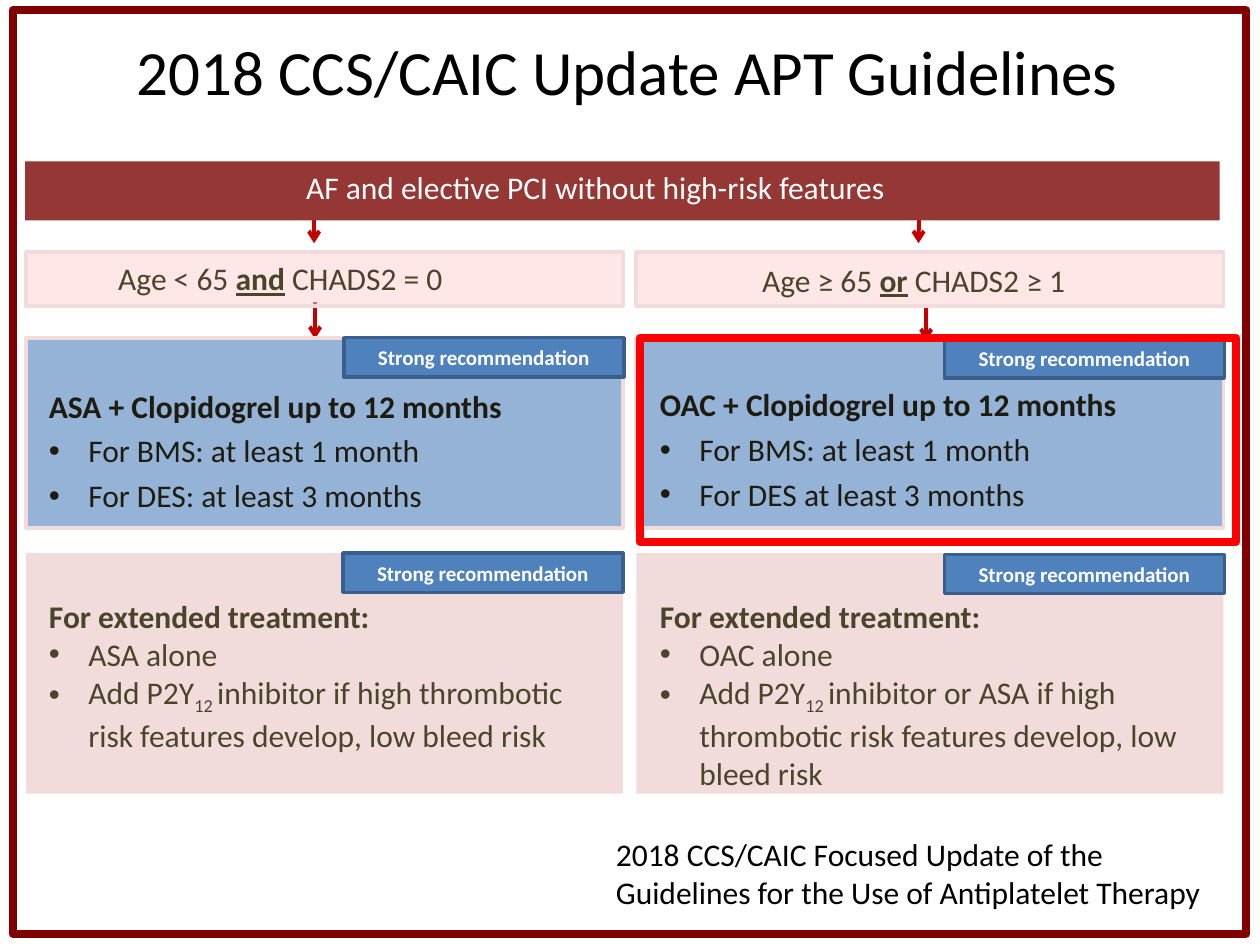
from dataclasses import dataclass

from lxml.etree import SubElement
from pptx import Presentation
from pptx.dml.color import RGBColor
from pptx.enum.shapes import MSO_CONNECTOR, MSO_SHAPE
from pptx.enum.text import MSO_ANCHOR, PP_ALIGN
from pptx.oxml.ns import qn
from pptx.util import Pt

FONT = "Calibri"
OLIVE, INK, WHITE, BLACK = "4A452A", "1E1C11", "FFFFFF", "000000"
ROSE, PALE_BLUE = "F2DCDB", "95B3D7"


@dataclass
class Run:
    text: str
    bold: bool = False
    underline: bool = False
    baseline: int = 0


@dataclass
class Para:
    runs: list[Run]
    bullet: bool = False


@dataclass
class Box:
    """Left, top, width and height in points."""
    x: float
    y: float
    w: float
    h: float

    def lengths(self):
        return Pt(self.x), Pt(self.y), Pt(self.w), Pt(self.h)


@dataclass
class Branch:
    x: float
    w: float
    criterion: Para
    criterion_box: Box
    therapy: list[Para]
    therapy_box: Box
    extended: list[Para]
    extended_box: Box
    badges: list[tuple[float, float]]
    arrows: list[tuple[float, float, float]]


def rgb(color: str) -> RGBColor:
    return RGBColor.from_string(color)


def write(tf, paras: list[Para], *, size=18, color=BLACK, align=PP_ALIGN.LEFT,
          anchor=MSO_ANCHOR.TOP, wrap=True, bullet_gap=0):
    tf.word_wrap = wrap
    tf.vertical_anchor = anchor
    for i, para in enumerate(paras):
        p = tf.paragraphs[0] if i == 0 else tf.add_paragraph()
        p.alignment = align
        if para.bullet:
            p.space_before = Pt(bullet_gap)
            pPr = p._p.get_or_add_pPr()
            pPr.set("marL", str(Pt(22.5)))
            pPr.set("indent", str(-Pt(22.5)))
            SubElement(pPr, qn("a:buFont"), typeface="Arial")
            SubElement(pPr, qn("a:buChar"), char="•")
        for run in para.runs:
            r = p.add_run()
            r.text = run.text
            r.font.name, r.font.size = FONT, Pt(size)
            r.font.bold, r.font.underline = run.bold, run.underline
            r.font.color.rgb = rgb(color)
            if run.baseline:
                r._r.get_or_add_rPr().set("baseline", str(run.baseline * 1000))


def add_label(s, box: Box, paras: list[Para], **fmt):
    write(s.shapes.add_textbox(*box.lengths()).text_frame, paras, **fmt)


def add_rect(s, box: Box, fill=None, line=None, weight=2.0, alpha=None):
    sp = s.shapes.add_shape(MSO_SHAPE.RECTANGLE, *box.lengths())
    sp.shadow.inherit = False
    if fill:
        sp.fill.solid()
        sp.fill.fore_color.rgb = rgb(fill)
        if alpha:
            clr = sp._element.spPr.find(qn("a:solidFill"))[0]
            SubElement(clr, qn("a:alpha"), val=str(alpha * 1000))
    else:
        sp.fill.background()
    if line:
        sp.line.color.rgb = rgb(line)
        sp.line.width = Pt(weight)
    else:
        sp.line.fill.background()
    return sp


def add_down_arrow(s, x: float, top: float, bottom: float):
    c = s.shapes.add_connector(MSO_CONNECTOR.STRAIGHT, Pt(x), Pt(top), Pt(x), Pt(bottom))
    c.line.color.rgb = rgb("C40000")
    c.line.width = Pt(2.25)
    SubElement(c.line._get_or_add_ln(), qn("a:tailEnd"), type="arrow")
    SubElement(c._element.spPr, qn("a:effectLst"))


def add_badge(s, x: float, y: float):
    sp = add_rect(s, Box(x, y, 160, 22.5), "4F81BD", "3A5F8C")
    write(sp.text_frame, [Para([Run("Strong recommendation", bold=True)])], size=12,
          color=WHITE, align=PP_ALIGN.CENTER, anchor=MSO_ANCHOR.MIDDLE)


def add_branch(s, b: Branch):
    add_rect(s, Box(b.x, 144, b.w, 31), "FFD1D1", ROSE, alpha=50)
    add_label(s, b.criterion_box, [b.criterion], color=OLIVE, wrap=False)
    add_rect(s, Box(b.x, 193, b.w, 108.7), PALE_BLUE, ROSE)
    add_label(s, b.therapy_box, b.therapy, color=INK, wrap=False, bullet_gap=4)
    add_rect(s, Box(b.x, 316, b.w, 137.5), ROSE)
    add_label(s, b.extended_box, b.extended, color=OLIVE)
    for x, y in b.badges:
        add_badge(s, x, y)


def criterion(before: str, word: str, after: str) -> Para:
    return Para([Run(before), Run(word, bold=True, underline=True), Run(after)])


def heading_and_bullets(heading: str, *bullets: list[Run]) -> list[Para]:
    return [Para([Run(heading, bold=True)])] + [Para(runs, bullet=True) for runs in bullets]


def therapy(drug: str, des: str) -> list[Para]:
    return heading_and_bullets(f"{drug} + Clopidogrel up to 12 months",
                               [Run("For BMS: at least 1 month")], [Run(des)])


def extended(drug: str, addition: str) -> list[Para]:
    return heading_and_bullets(
        "For extended treatment:", [Run(f"{drug} alone")],
        [Run("Add P2Y"), Run("12 ", baseline=-25),
         Run(f"{addition} if high thrombotic risk features develop, low bleed risk")])


BRANCHES = [
    Branch(15, 341, criterion("Age < 65 ", "and", " CHADS2 = 0"), Box(60.5, 144.7, 237.6, 29),
           therapy("ASA", "For DES: at least 3 months"), Box(20.9, 217.4, 277, 80.6),
           extended("ASA", "inhibitor"), Box(20.9, 337.7, 334.8, 94.3),
           [(196.5, 193), (196, 316)], [(179.5, 118, 139), (180, 172.8, 193.7)]),
    Branch(363.6, 335.5, criterion("Age ≥ 65 ", "or", " CHADS2 ≥ 1"), Box(428.4, 145.4, 218, 29),
           therapy("OAC", "For DES at least 3 months"), Box(370, 216.7, 322, 80.6),
           extended("OAC", "inhibitor or ASA"), Box(370, 337.7, 329.8, 116.6),
           [(539.7, 193.7), (539.7, 316.8)], [(524.9, 117.4, 139), (529.2, 173.5, 195)]),
]


def main():
    prs = Presentation()
    prs.slide_width, prs.slide_height = Pt(720), Pt(540)
    s = prs.slides.add_slide(prs.slide_layouts[5])
    s.background.fill.solid()
    s.background.fill.fore_color.rgb = rgb(WHITE)

    title = s.shapes.title
    title.left, title.top, title.width, title.height = Box(48.2, 17.3, 620.6, 46).lengths()
    write(title.text_frame, [Para([Run("2018 CCS/CAIC Update APT Guidelines")])], size=36,
          align=PP_ALIGN.CENTER, anchor=MSO_ANCHOR.MIDDLE)

    for b in BRANCHES:
        for arrow in b.arrows:
            add_down_arrow(s, *arrow)
    add_rect(s, Box(14.4, 92.2, 682.5, 33.8), "953735")
    add_label(s, Box(167.8, 92.2, 382.3, 29),
              [Para([Run("AF and elective PCI without high-risk features")])],
              color=WHITE, wrap=False)
    for b in BRANCHES:
        add_branch(s, b)

    add_rect(s, Box(365.8, 193, 340.6, 116.6), line="FF0000", weight=4.5)
    add_rect(s, Box(7.2, 5.8, 704.9, 527.8), line="800000", weight=4.5)
    add_label(s, Box(344.9, 473.8, 352, 51),
              [Para([Run("2018 CCS/CAIC Focused Update of the Guidelines "
                         "for the Use of Antiplatelet Therapy")])])
    prs.save("out.pptx")


if __name__ == "__main__":
    main()
